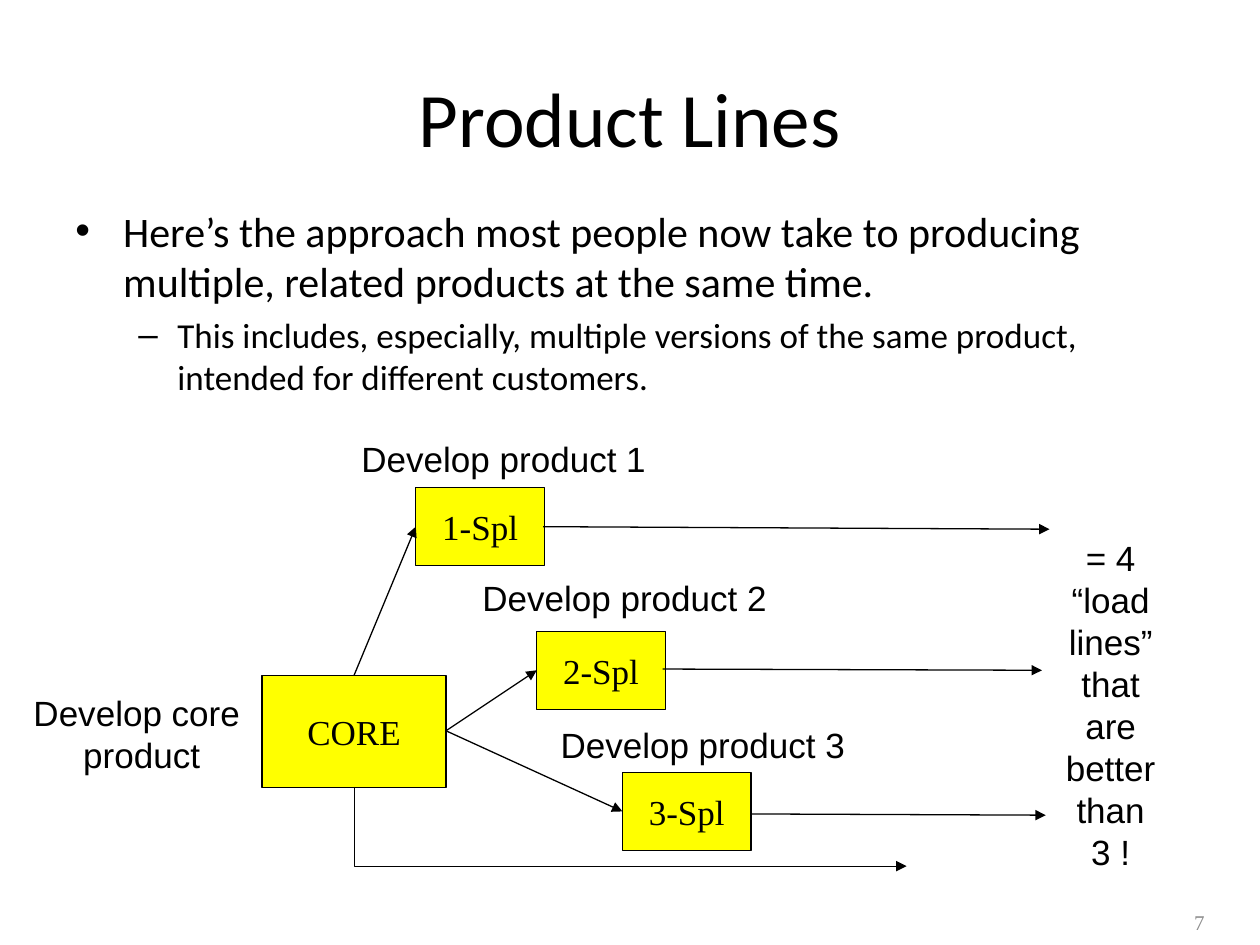
from lxml import etree
from pptx import Presentation
from pptx.dml.color import RGBColor
from pptx.enum.shapes import MSO_CONNECTOR, MSO_SHAPE
from pptx.enum.text import MSO_ANCHOR, PP_ALIGN
from pptx.oxml.ns import qn
from pptx.util import Inches, Pt

BLACK = RGBColor(0x00, 0x00, 0x00)
GRAY = RGBColor(0x8C, 0x8C, 0x8C)
YELLOW = RGBColor(0xFF, 0xFF, 0x00)

deck = Presentation()
deck.slide_width, deck.slide_height = Inches(10), Inches(7.5)
page = deck.slides.add_slide(deck.slide_layouts[6])


def write(box, text, size=20, font="Arial", color=BLACK, align=PP_ALIGN.CENTER,
          anchor=MSO_ANCHOR.TOP, wrap=False, bullets=()):
    """Fill a shape with one paragraph per line; bullets holds (character, margin, indent, space before)."""
    frame = box.text_frame
    frame.word_wrap = wrap
    frame.vertical_anchor = anchor
    frame.text = text
    sizes = size if isinstance(size, tuple) else (size,) * len(frame.paragraphs)
    for index, paragraph in enumerate(frame.paragraphs):
        paragraph.alignment = align
        if bullets:
            character, margin, indent, space = bullets[index]
            paragraph.level = index
            properties = paragraph._p.get_or_add_pPr()
            properties.set("marL", str(Inches(margin)))
            properties.set("indent", str(Inches(indent)))
            etree.SubElement(properties, qn("a:buFont"), typeface="Arial")
            etree.SubElement(properties, qn("a:buChar"), char=character)
            if space:
                paragraph.space_before = Pt(space)
        paragraph.font.size = Pt(sizes[index])
        paragraph.font.name = font
        paragraph.font.color.rgb = color


def add_arrow(kind, *ends):
    arrow = page.shapes.add_connector(kind, *[Inches(value) for value in ends])
    arrow.line.color.rgb = BLACK
    arrow.line.width = Pt(0.75)
    etree.SubElement(arrow.line._get_or_add_ln(), qn("a:tailEnd"), type="triangle")
    etree.SubElement(arrow._element.spPr, qn("a:effectLst"))
    return arrow


# Title, bullets, captions and page number
texts = [
    ((7.33, 7.12, 2.33, 0.4), "7",
     dict(size=12, font="Times New Roman", color=GRAY, align=PP_ALIGN.RIGHT,
          anchor=MSO_ANCHOR.MIDDLE, wrap=True)),
    ((0.5, 0.3, 9, 1.25), "Product Lines",
     dict(size=44, font="Calibri", anchor=MSO_ANCHOR.MIDDLE, wrap=True)),
    ((0.5, 1.58, 9, 4.95),
     "Here’s the approach most people now take to producing multiple, related products at the same time.\n"
     "This includes, especially, multiple versions of the same product, intended for different customers.",
     dict(size=(24, 20), font="Calibri", align=PP_ALIGN.LEFT, wrap=True,
          bullets=(("•", 0.38, -0.38, 0), ("–", 0.81, -0.31, 4)))),
    ((0.16, 5.44, 1.93, 0.77), "Develop core \nproduct", {}),
    ((8.25, 4.21, 1.13, 2.79),
     "= 4\n“load\nlines”\nthat\nare\nbetter\nthan\n3 !", dict(wrap=True)),
]
for number, (left, top) in enumerate([(2.77, 3.42), (3.73, 4.53), (4.35, 5.69)], start=1):
    texts.append(((left, top, 2.48, 0.44), f"Develop product {number}",
                  dict(align=PP_ALIGN.LEFT)))
for place, text, style in texts:
    write(page.shapes.add_textbox(*[Inches(value) for value in place]), text, **style)

# Core and product boxes
blocks = [("CORE", 2.08, 5.36, 1.46, 0.89)]
for number, (left, top) in enumerate([(3.3, 3.87), (4.26, 5.01), (4.94, 6.13)], start=1):
    blocks.append((f"{number}-Spl", left, top, 1.02, 0.62))
for name, *place in blocks:
    block = page.shapes.add_shape(MSO_SHAPE.RECTANGLE, *[Inches(value) for value in place])
    block.shadow.inherit = False
    block.fill.solid()
    block.fill.fore_color.rgb = YELLOW
    block.line.color.rgb = BLACK
    block.line.width = Pt(0.75)
    write(block, name, font="Times New Roman", anchor=MSO_ANCHOR.MIDDLE)

# Arrows from the core to each product, then from each product onward
for ends in [
    (2.81, 5.36, 3.3, 4.18),
    (3.54, 5.8, 4.26, 5.32),
    (3.54, 5.8, 4.94, 6.44),
    (4.31, 4.18, 8.33, 4.2),
    (5.26, 5.31, 8.27, 5.32),
    (5.96, 6.46, 8.3, 6.47),
]:
    add_arrow(MSO_CONNECTOR.STRAIGHT, *ends)

# The core's own line: a single bend, turned to run down and then right
core_line = add_arrow(MSO_CONNECTOR.ELBOW, 5.32, 4.37, 4.69, 8.75)
core_line._element.spPr.find(qn("a:prstGeom")).set("prst", "bentConnector2")
core_line._element.spPr.find(qn("a:xfrm")).set("rot", str(270 * 60000))

deck.save("out.pptx")
